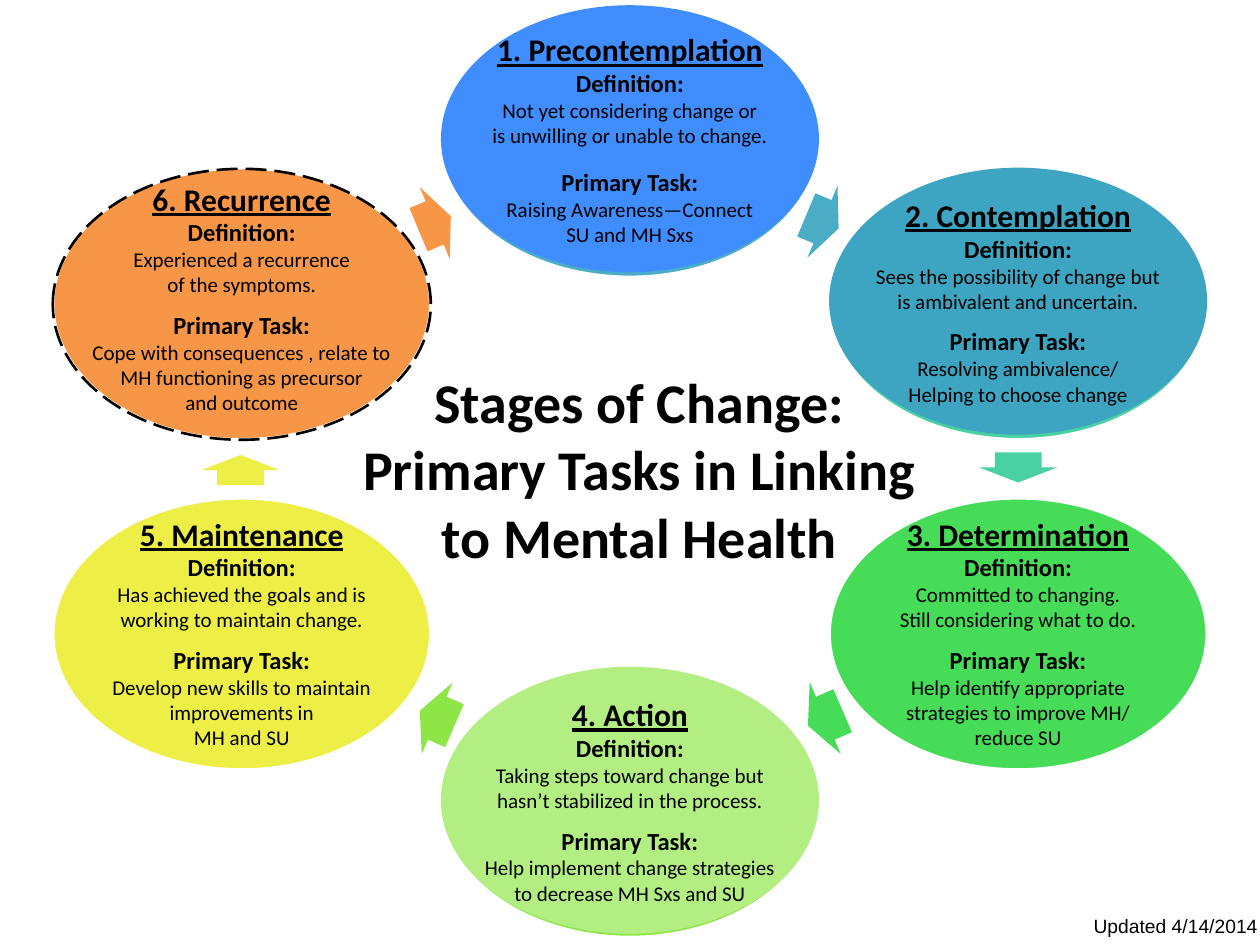
from collections import namedtuple

from pptx import Presentation
from pptx.dml.color import RGBColor
from pptx.enum import dml, shapes, text
from pptx.util import Pt

BLACK = RGBColor(0x00, 0x00, 0x00)
WHITE = RGBColor(0xFF, 0xFF, 0xFF)
BLUE = RGBColor(0x3F, 0x8D, 0xFF)
SKY = RGBColor(0x4B, 0xAC, 0xC6)
TEAL = RGBColor(0x3D, 0xA5, 0xC1)
MINT = RGBColor(0x49, 0xD1, 0xA3)
GREEN = RGBColor(0x47, 0xDC, 0x57)
LIME = RGBColor(0x8D, 0xE6, 0x46)
PALE_LIME = RGBColor(0xB3, 0xEE, 0x82)
YELLOW = RGBColor(0xEE, 0xEF, 0x46)
ORANGE = RGBColor(0xF7, 0x96, 0x46)

# Lengths in points
OVAL_WIDTH, RING_HEIGHT, FACE_HEIGHT = 216, 155.5, 152.6
LEFT, MIDDLE, RIGHT = 30.2, 252, 473.8
ARROW_HEIGHT = 44.6

Stage = namedtuple("Stage", "name left ring_top face_top ring face gap definition task")
Arrow = namedtuple("Arrow", "center_x center_y length angle color")

STAGES = [
    Stage("1. Precontemplation", MIDDLE, 3, 3, SKY, BLUE, 11,
          ["Not yet considering change or", "is unwilling or unable to change."],
          ["Raising Awareness—Connect", "SU and MH Sxs"]),
    Stage("2. Contemplation", RIGHT, 95.8, 95.8, MINT, TEAL, 7.3,
          ["Sees the possibility of change but", "is ambivalent and uncertain."],
          ["Resolving ambivalence/", "Helping to choose change"]),
    Stage("3. Determination", RIGHT, 284.5, 285, GREEN, None, 7.3,
          ["Committed to changing.", "Still considering what to do."],
          ["Help identify appropriate", "strategies to improve MH/", "reduce SU"]),
    Stage("4. Action", MIDDLE, 380.2, 381, LIME, PALE_LIME, 7.3,
          ["Taking steps toward change but", "hasn’t stabilized in the process."],
          ["Help implement change strategies", "to decrease MH Sxs and SU"]),
    Stage("5. Maintenance", LEFT, 284.5, 285, YELLOW, None, 7.3,
          ["Has achieved the goals and is", "working to maintain change."],
          ["Develop new skills to maintain", "improvements in", "MH and SU"]),
    Stage("6. Recurrence", LEFT, 95.8, 93.6, ORANGE, None, 7.3,
          ["Experienced a recurrence", "of the symptoms."],
          ["Cope with consequences , relate to", "MH functioning as precursor",
           "and outcome"]),
]

ARROWS = [
    Arrow(470, 126.7, 20, 22.7, SKY),
    Arrow(581.8, 267.1, 17.3, 90, MINT),
    Arrow(471.6, 410.4, 21.6, 156.6, GREEN),
    Arrow(249.8, 410.4, 21.6, 203.4, LIME),
    Arrow(137.5, 268.6, 17.3, 270, YELLOW),
    Arrow(248.4, 127.4, 20, 337.3, ORANGE),
]

TITLE = ["Stages of Change:", "Primary Tasks in Linking", "to Mental Health"]


def add_figure(page, kind, left, top, width, height, fill=None):
    """Add a preset shape without outline or shadow."""
    figure = page.shapes.add_shape(kind, Pt(left), Pt(top), Pt(width), Pt(height))
    figure.shadow.inherit = False
    figure.line.fill.background()
    if fill is None:
        figure.fill.background()
    else:
        figure.fill.solid()
        figure.fill.fore_color.rgb = fill
    return figure


def add_oval(page, left, top, height, fill=None):
    return add_figure(page, shapes.MSO_SHAPE.OVAL, left, top, OVAL_WIDTH, height, fill)


def set_outline(figure, color, width):
    figure.line.color.rgb = color
    figure.line.width = Pt(width)


def add_arrow(page, arrow):
    figure = add_figure(page, shapes.MSO_SHAPE.RIGHT_ARROW,
                        arrow.center_x - arrow.length / 2,
                        arrow.center_y - ARROW_HEIGHT / 2,
                        arrow.length, ARROW_HEIGHT, arrow.color)
    figure.adjustments[0] = 0.6
    figure.adjustments[1] = 0.5
    figure.rotation = arrow.angle


def write_lines(frame, lines, size, bold=False, underline=False, gap=0,
                font="Calibri", align=text.PP_ALIGN.CENTER):
    """Write one paragraph per line, with a gap above the first one."""
    for number, line in enumerate(lines):
        first = frame.paragraphs[0]
        para = frame.add_paragraph() if first.runs else first
        para.alignment = align
        if gap and number == 0:
            para.space_before = Pt(gap)
        span = para.add_run()
        span.text = line
        span.font.name = font
        span.font.size = Pt(size)
        span.font.bold = bold
        span.font.underline = underline
        span.font.color.rgb = BLACK


def add_stage(page, stage):
    oval = add_oval(page, stage.left, stage.face_top, FACE_HEIGHT, stage.face)
    frame = oval.text_frame
    frame.word_wrap = False
    frame.vertical_anchor = text.MSO_ANCHOR.MIDDLE
    write_lines(frame, [stage.name], 18, bold=True, underline=True)
    write_lines(frame, ["Definition:"], 14, bold=True)
    write_lines(frame, stage.definition, 12)
    write_lines(frame, ["Primary Task:"], 14, bold=True, gap=stage.gap)
    write_lines(frame, stage.task, 12)


def add_text_box(page, left, top, width, height):
    box = page.shapes.add_textbox(Pt(left), Pt(top), Pt(width), Pt(height))
    box.text_frame.word_wrap = False
    return box.text_frame


def main():
    deck = Presentation()
    deck.slide_width, deck.slide_height = Pt(720), Pt(540)
    page = deck.slides.add_slide(deck.slide_layouts[6])

    # Cycle of rings and arrows
    for stage, arrow in zip(STAGES, ARROWS):
        ring = add_oval(page, stage.left, stage.ring_top, RING_HEIGHT, stage.ring)
        set_outline(ring, WHITE, 2)
        add_arrow(page, arrow)

    # Title in the centre
    write_lines(add_text_box(page, 189.4, 206.6, 352, 124), TITLE, 32, bold=True)

    # Stage faces with their text
    for stage in STAGES:
        add_stage(page, stage)

    # Dashed outline around the last stage
    dashes = add_oval(page, LEFT, 96.5, 154.8)
    set_outline(dashes, BLACK, 1.5)
    dashes.line.dash_style = dml.MSO_LINE.LONG_DASH

    # Date of the last update
    date = add_text_box(page, 617.8, 519.1, 102, 20.9)
    date.margin_right = 0
    write_lines(date, ["Updated 4/14/2014"], 11, font="Arial",
                align=text.PP_ALIGN.LEFT)

    deck.save("out.pptx")


if __name__ == "__main__":
    main()
